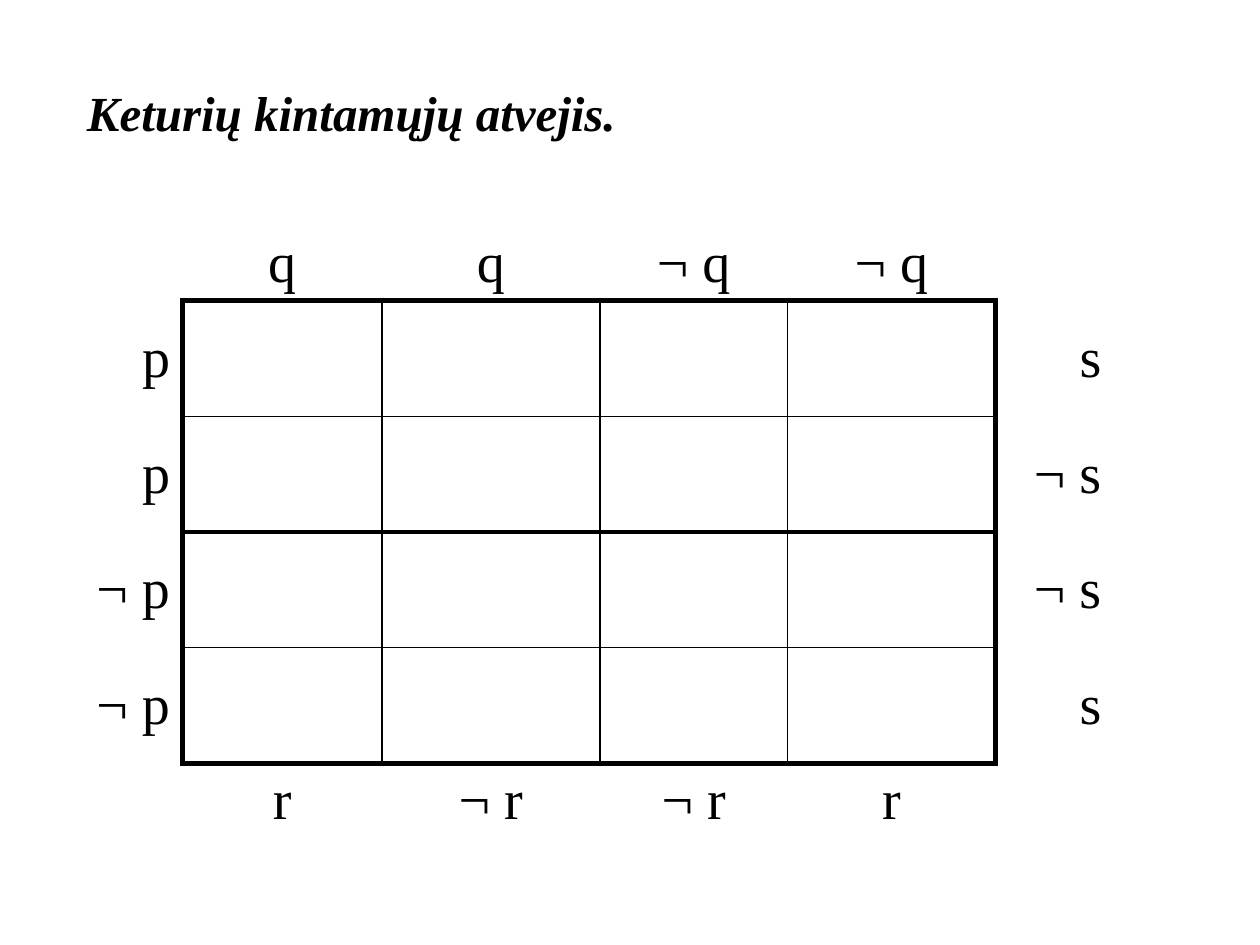
from lxml import etree
from pptx import Presentation
from pptx.dml.color import RGBColor
from pptx.enum.text import MSO_ANCHOR, MSO_AUTO_SIZE, PP_ALIGN
from pptx.oxml.ns import qn
from pptx.util import Pt

TOP, MIDDLE, BOTTOM = MSO_ANCHOR.TOP, MSO_ANCHOR.MIDDLE, MSO_ANCHOR.BOTTOM
LEFT, CENTER, RIGHT = PP_ALIGN.LEFT, PP_ALIGN.CENTER, PP_ALIGN.RIGHT
NO_FIT = MSO_AUTO_SIZE.NONE
TITLE_ONLY = 5
HEAVY, THIN = 3, 1
BLACK = "000000"


def color(hex_string):
    return RGBColor.from_string(hex_string)


class Deck:
    font = {"name": "Times New Roman", "size": Pt(32)}
    title_font = {"name": "Times New Roman", "size": Pt(28), "bold": True, "italic": True}

    def __init__(self, width, height):
        self.prs = Presentation()
        self.prs.slide_width, self.prs.slide_height = Pt(width), Pt(height)
        self.s = self.prs.slides.add_slide(self.prs.slide_layouts[TITLE_ONLY])

    def add_text(self, tf, text, font, align):
        p = tf.paragraphs[0]
        p.alignment = align
        r = p.add_run()
        r.text = text
        for name, value in font.items():
            setattr(r.font, name, value)
        r.font.color.rgb = color(BLACK)

    def title(self, text, left, top, width, height):
        sp = self.s.shapes.title
        box = {"left": left, "top": top, "width": width, "height": height}
        for name, value in box.items():
            setattr(sp, name, Pt(value))
        tf = sp.text_frame
        tf.auto_size, tf.word_wrap, tf.vertical_anchor = NO_FIT, True, MIDDLE
        self.add_text(tf, text, self.title_font, LEFT)

    def border(self, cell, side, weight):
        """Draw one cell edge; a weight of 0 leaves it blank."""
        ln = etree.SubElement(cell._tc.get_or_add_tcPr(), qn(f"a:ln{side}"), w=str(Pt(weight)))
        if weight:
            fill = etree.SubElement(ln, qn("a:solidFill"))
            etree.SubElement(fill, qn("a:srgbClr"), val=BLACK)
        else:
            etree.SubElement(ln, qn("a:noFill"))

    def table(self, left, top, col_widths, row_height, n_rows):
        n_cols = len(col_widths)
        table = self.s.shapes.add_table(n_rows, n_cols, Pt(left), Pt(top),
                                        Pt(sum(col_widths)), Pt(row_height * n_rows)).table
        table.first_row = table.horz_banding = False
        for col, width in zip(table.columns, col_widths):
            col.width = Pt(width)
        for row in table.rows:
            row.height = Pt(row_height)
        return table

    def label(self, cell, text, align, anchor):
        cell.vertical_anchor = anchor
        self.add_text(cell.text_frame, text, self.font, align)

    def save(self):
        self.prs.save("out.pptx")


def vertical_weight(row, x):
    """Weight of the vertical line x beside a row: heavy at the outer frame."""
    if not (1 <= row <= 4 and 1 <= x <= 5):
        return 0
    return HEAVY if x in (1, 5) else THIN


def horizontal_weight(col, y):
    """Weight of the horizontal line y in a column: heavy at frame and middle."""
    if not (1 <= col <= 4 and 1 <= y <= 5):
        return 0
    return HEAVY if y in (1, 3, 5) else THIN


def main():
    deck = Deck(720, 540)
    deck.title("Keturių kintamųjų atvejis.", 42.5, 43.2, 329, 41)

    # Karnaugh map grid with a margin of label cells
    table = deck.table(19.4, 105.8, [85, 113.8, 124.6, 107.3, 118.8, 67.7], 66.1, 6)
    for row in range(6):
        for col in range(6):
            cell = table.cell(row, col)
            deck.border(cell, "L", vertical_weight(row, col))
            deck.border(cell, "R", vertical_weight(row, col + 1))
            deck.border(cell, "T", horizontal_weight(col, row))
            deck.border(cell, "B", horizontal_weight(col, row + 1))
            cell.fill.background()

    # Variable labels above and below the grid
    for row, anchor, labels in ((0, BOTTOM, ["q", "q", "¬ q", "¬ q"]),
                                (5, TOP, ["r", "¬ r", "¬ r", "r"])):
        for col, text in enumerate(labels, 1):
            deck.label(table.cell(row, col), text, CENTER, anchor)

    # Variable labels left and right of the grid
    for col, labels in ((0, ["p", "p", "¬ p", "¬ p"]),
                        (5, ["s", "¬ s", "¬ s", "s"])):
        for row, text in enumerate(labels, 1):
            deck.label(table.cell(row, col), text, RIGHT, MIDDLE)

    deck.save()


if __name__ == "__main__":
    main()
